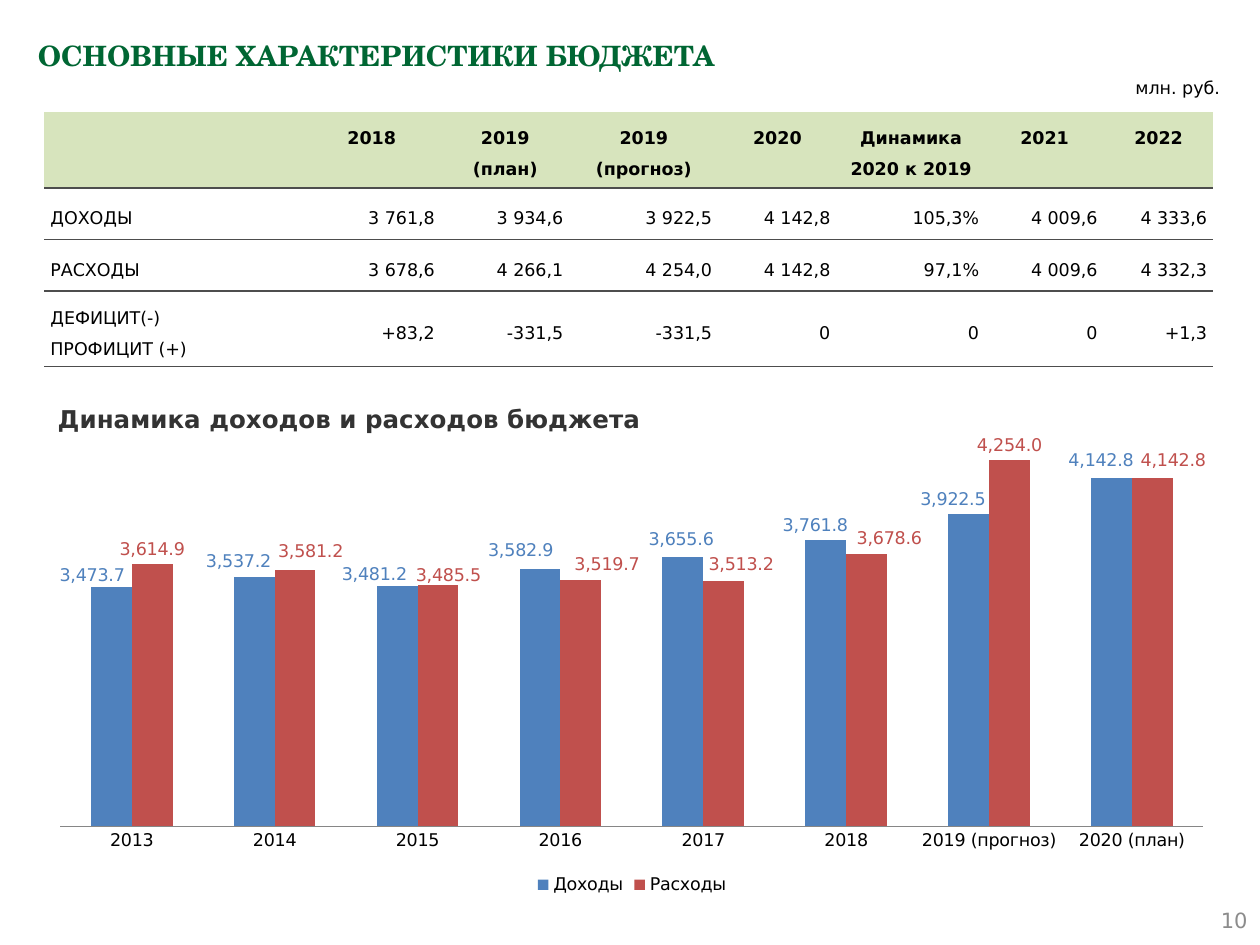
from dataclasses import dataclass
from typing import Optional

import lxml.etree
import pptx
import pptx.chart.data
import pptx.dml.color
import pptx.enum.chart
import pptx.enum.shapes
import pptx.enum.text
import pptx.oxml.ns
import pptx.util

Pt = pptx.util.Pt
RGBColor = pptx.dml.color.RGBColor
Align = pptx.enum.text.PP_ALIGN
Anchor = pptx.enum.text.MSO_ANCHOR
qn = pptx.oxml.ns.qn

SANS = "DejaVu Sans"
SERIF = "TeX Gyre Schola"
BLACK = RGBColor(0x00, 0x00, 0x00)
TITLE_GREEN = RGBColor(0x00, 0x66, 0x33)
HEADER_GREEN = RGBColor(0xD7, 0xE4, 0xBD)
HEADING_GRAY = RGBColor(0x33, 0x33, 0x33)
RULE_GRAY = RGBColor(0x4D, 0x4D, 0x4D)
AXIS_GRAY = RGBColor(0x86, 0x86, 0x86)
NUMBER_GRAY = RGBColor(0x8C, 0x8C, 0x8C)
INCOME_BLUE = RGBColor(0x4F, 0x81, 0xBD)
EXPENSE_RED = RGBColor(0xC0, 0x50, 0x4D)
NO_TABLE_STYLE = "{2D5ABB26-0587-4C30-8999-92F81FD0307C}"
NUMBER_FORMAT = "#,##0.0"


@dataclass
class Box:
    left: float
    top: float
    width: float
    height: float

    def lengths(self) -> tuple:
        return Pt(self.left), Pt(self.top), Pt(self.width), Pt(self.height)


@dataclass
class TextStyle:
    size: float
    color: RGBColor = BLACK
    bold: bool = False
    font: str = SANS
    align: Align = Align.LEFT
    anchor: Anchor = Anchor.TOP
    spacing: Optional[float] = None


@dataclass
class BudgetSeries:
    name: str
    color: RGBColor
    values: list
    label_shifts: list  # (right, down) in points, None for the usual place


TITLE = TextStyle(16, TITLE_GREEN, True, SERIF, spacing=1.2)
HEADING = TextStyle(14, HEADING_GRAY, True, spacing=1.2)
UNIT = TextStyle(10, align=Align.RIGHT, anchor=Anchor.MIDDLE)
PAGE_NUMBER = TextStyle(12, NUMBER_GRAY, align=Align.RIGHT, anchor=Anchor.MIDDLE)
TABLE_HEADER = TextStyle(10, bold=True, align=Align.CENTER, spacing=1.5)
ROW_NAME = TextStyle(10, anchor=Anchor.MIDDLE, spacing=1.5)
ROW_VALUE = TextStyle(10, align=Align.RIGHT, anchor=Anchor.MIDDLE, spacing=1.5)

TABLE_BOX = Box(25.2, 64, 668.9, 143.5)
COLUMN_WIDTHS = [147.6, 79.2, 73.4, 85, 67.7, 85, 67.7, 62.6]
ROW_HEIGHTS = [42, 29.5, 29.5, 42.5]
TABLE_ROWS = [
    ["", "2018", "2019\n(план)", "2019\n(прогноз)", "2020", "Динамика 2020 к 2019", "2021", "2022"],
    ["ДОХОДЫ", "3 761,8", "3 934,6", "3 922,5", "4 142,8", "105,3%", "4 009,6", "4 333,6"],
    ["РАСХОДЫ", "3 678,6", "4 266,1", "4 254,0", "4 142,8", "97,1%", "4 009,6", "4 332,3"],
    ["ДЕФИЦИТ(-)\nПРОФИЦИТ (+)", "+83,2", "-331,5", "-331,5", "0", "0", "0", "+1,3"],
]

CHART_BOX = Box(20.9, 234.7, 680.4, 279.4)
YEARS = ["2013", "2014", "2015", "2016", "2017", "2018", "2019 (прогноз)", "2020 (план)"]
SERIES = [
    BudgetSeries(
        "Доходы", INCOME_BLUE,
        [3473.7, 3537.2, 3481.2, 3582.9, 3655.6, 3761.8, 3922.5, 4142.8],
        [(-11, 2), (-9, 0), (-13, 2), (-11, -2), (-1, -2), (-6, 0), (-9, 0), (-6, -2)]),
    BudgetSeries(
        "Расходы", EXPENSE_RED,
        [3614.9, 3581.2, 3485.5, 3519.7, 3513.2, 3678.6, 4254, 4142.8],
        [None, (9, -2), (6, 3), (15, 0), (10, -1), (13, 0), None, (12, -2)]),
]


def set_font(font, size: float, color: RGBColor, bold: bool = False, name: str = SANS) -> None:
    font.size, font.bold, font.name = Pt(size), bold, name
    font.color.rgb = color


def write(frame, text: str, style: TextStyle) -> None:
    frame.text = text
    frame.word_wrap = True
    for paragraph in frame.paragraphs:
        paragraph.alignment = style.align
        paragraph.line_spacing = style.spacing
        set_font(paragraph.font, style.size, style.color, style.bold, style.font)


def add_text(slide, box: Box, text: str, style: TextStyle) -> None:
    shape = slide.shapes.add_textbox(*box.lengths())
    write(shape.text_frame, text, style)
    shape.text_frame.vertical_anchor = style.anchor


def add_bottom_rule(cell) -> None:
    line = lxml.etree.Element(qn("a:lnB"), w=str(int(Pt(1))))
    fill = lxml.etree.SubElement(line, qn("a:solidFill"))
    lxml.etree.SubElement(fill, qn("a:srgbClr"), val=str(RULE_GRAY))
    cell._tc.get_or_add_tcPr().insert(0, line)


def add_budget_table(slide) -> None:
    frame = slide.shapes.add_table(len(TABLE_ROWS), len(COLUMN_WIDTHS), *TABLE_BOX.lengths())
    table = frame.table
    table.first_row = table.horz_banding = False
    table._tbl.tblPr.find(qn("a:tableStyleId")).text = NO_TABLE_STYLE
    for column, width in zip(table.columns, COLUMN_WIDTHS):
        column.width = Pt(width)
    for row_index, (row, height) in enumerate(zip(table.rows, ROW_HEIGHTS)):
        row.height = Pt(height)
        for column_index, cell in enumerate(row.cells):
            if row_index == 0:
                style = TABLE_HEADER
                cell.fill.solid()
                cell.fill.fore_color.rgb = HEADER_GREEN
            else:
                style = ROW_VALUE if column_index else ROW_NAME
                cell.fill.background()
            cell.margin_left = cell.margin_right = Pt(3.6)
            cell.margin_top = cell.margin_bottom = Pt(3.6)
            cell.vertical_anchor = style.anchor
            write(cell.text_frame, TABLE_ROWS[row_index][column_index], style)
            add_bottom_rule(cell)


def manual_layout(**settings):
    """Return a c:layout element holding the given manual settings."""
    layout = lxml.etree.Element(qn("c:layout"))
    manual = lxml.etree.SubElement(layout, qn("c:manualLayout"))
    for name, value in settings.items():
        lxml.etree.SubElement(manual, qn(f"c:{name}")).set("val", str(value))
    return layout


def format_series(series, budget: BudgetSeries) -> None:
    series.format.fill.solid()
    series.format.fill.fore_color.rgb = budget.color
    outside = pptx.enum.chart.XL_LABEL_POSITION.OUTSIDE_END
    labels = series.data_labels
    labels.show_value = True
    labels.number_format = NUMBER_FORMAT
    labels.number_format_is_linked = False
    labels.position = outside
    set_font(labels.font, 10, budget.color)
    # Shift single labels so that neighbours do not overlap
    for index, shift in enumerate(budget.label_shifts):
        if shift:
            label = series.points[index].data_label
            set_font(label.font, 10, budget.color)
            label.position = outside
    for element in labels._element.findall(qn("c:dLbl")):
        index = element.find(qn("c:idx"))
        right, down = budget.label_shifts[int(index.get("val"))]
        index.addnext(manual_layout(x=round(right / CHART_BOX.width, 4),
                                    y=round(down / CHART_BOX.height, 4)))


def add_budget_chart(slide) -> None:
    data = pptx.chart.data.CategoryChartData(number_format=NUMBER_FORMAT)
    data.categories = YEARS
    for budget in SERIES:
        data.add_series(budget.name, budget.values)
    chart = slide.shapes.add_chart(
        pptx.enum.chart.XL_CHART_TYPE.COLUMN_CLUSTERED, *CHART_BOX.lengths(), data).chart
    set_font(chart.font, 18, BLACK, name="Calibri")
    chart.has_title = False
    chart.has_legend = True
    chart.legend.position = pptx.enum.chart.XL_LEGEND_POSITION.BOTTOM
    chart.legend.include_in_layout = False
    set_font(chart.legend.font, 10, BLACK)

    category_axis, value_axis = chart.category_axis, chart.value_axis
    category_axis.major_tick_mark = pptx.enum.chart.XL_TICK_MARK.NONE
    category_axis.format.line.color.rgb = AXIS_GRAY
    set_font(category_axis.tick_labels.font, 10, BLACK)
    value_axis.minimum_scale, value_axis.maximum_scale = 2000, 4500
    value_axis.has_major_gridlines = False
    value_axis.visible = False

    plot = chart.plots[0]
    plot.gap_width, plot.overlap, plot.vary_by_categories = 150, 0, False
    for series, budget in zip(plot.series, SERIES):
        format_series(series, budget)

    plot_area = chart._chartSpace.chart.plotArea
    for layout in plot_area.findall(qn("c:layout")):
        plot_area.remove(layout)
    plot_area.insert(0, manual_layout(layoutTarget="inner", xMode="edge", yMode="edge",
                                      x=0.02, y=0.02, w=0.96, h=0.83))


def main() -> None:
    presentation = pptx.Presentation()
    presentation.slide_width, presentation.slide_height = Pt(720), Pt(540)
    slide = presentation.slides.add_slide(presentation.slide_layouts[5])

    # Title and page number
    title = slide.shapes.title
    title.left, title.top, title.width, title.height = Box(14.4, 14.4, 691.9, 56.9).lengths()
    write(title.text_frame, "ОСНОВНЫЕ ХАРАКТЕРИСТИКИ БЮДЖЕТА", TITLE)
    title.text_frame.vertical_anchor = TITLE.anchor
    add_text(slide, Box(552.2, 511.2, 167.8, 28.8), "10", PAGE_NUMBER)

    # Budget figures, then their history
    add_budget_table(slide)
    add_budget_chart(slide)
    add_text(slide, Box(25.9, 223.9, 474.5, 25.2), "Динамика доходов и расходов бюджета", HEADING)

    # Unit of measure
    unit = slide.shapes.add_shape(
        pptx.enum.shapes.MSO_SHAPE.PENTAGON, *Box(614.9, 42.5, 89.3, 15.1).lengths())
    unit.adjustments[0] = 0
    unit.shadow.inherit = False
    unit.fill.background()
    unit.line.fill.background()
    write(unit.text_frame, "млн. руб.", UNIT)
    unit.text_frame.vertical_anchor = UNIT.anchor

    presentation.save("out.pptx")


if __name__ == "__main__":
    main()
